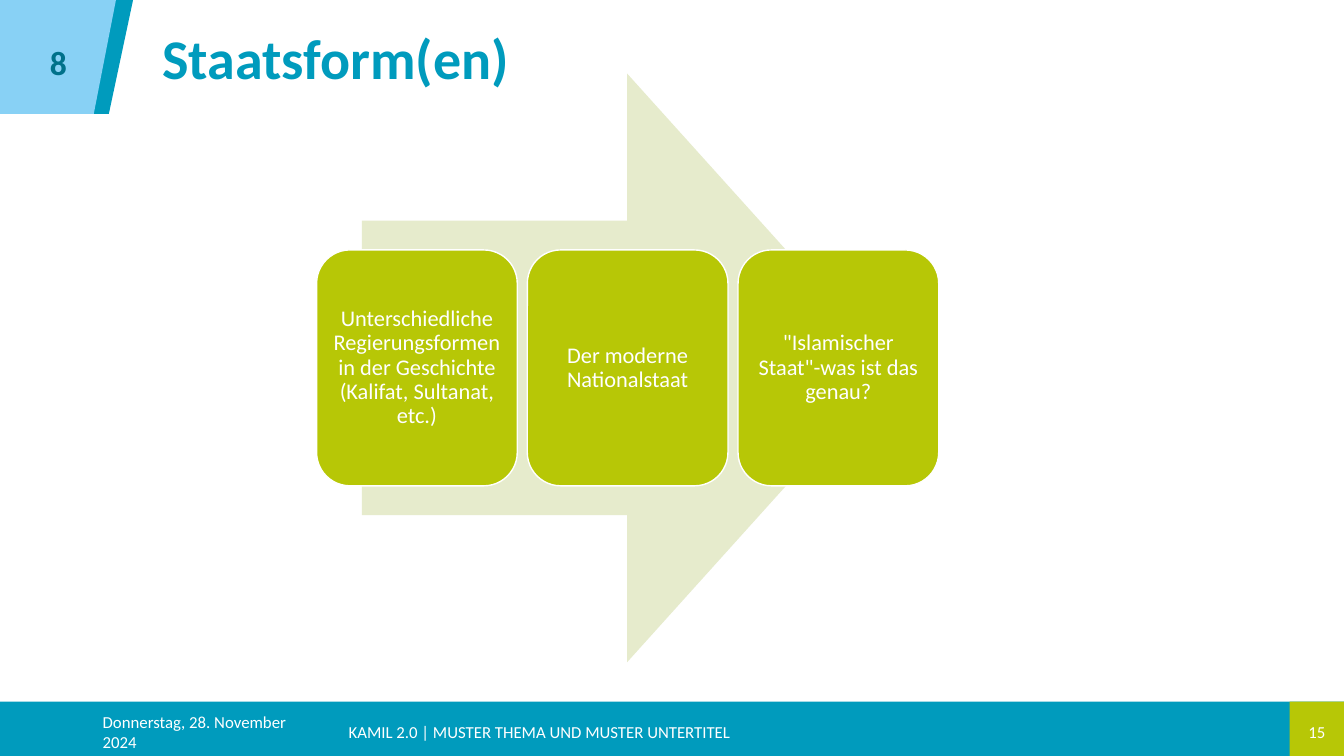
from dataclasses import dataclass

import pptx
import pptx.dml.color
import pptx.enum.shapes
import pptx.enum.text
import pptx.util

RGBColor = pptx.dml.color.RGBColor
MSO_SHAPE = pptx.enum.shapes.MSO_SHAPE
PP_ALIGN = pptx.enum.text.PP_ALIGN

EMU_PER_PX = 9144
SLIDE_WIDTH, SLIDE_HEIGHT = 1333, 750

WHITE = RGBColor(0xFF, 0xFF, 0xFF)
BLUE = RGBColor(0x00, 0x9B, 0xBD)
LIGHT_BLUE = RGBColor(0x88, 0xD1, 0xF5)
DARK_BLUE = RGBColor(0x00, 0x71, 0x8A)
GREEN = RGBColor(0xB7, 0xC7, 0x06)
PALE_GREEN = RGBColor(0xE6, 0xEB, 0xCC)


@dataclass(frozen=True)
class Box:
    left: int
    top: int
    width: int
    height: int

    def emu(self) -> list[int]:
        return [px(n) for n in (self.left, self.top, self.width, self.height)]


@dataclass(frozen=True)
class TextStyle:
    size: int
    color: RGBColor = WHITE
    bold: bool = False
    align: PP_ALIGN = PP_ALIGN.LEFT
    line_spacing: float = 1.0


@dataclass(frozen=True)
class Label:
    text: str
    box: Box
    style: TextStyle


@dataclass(frozen=True)
class Panel:
    kind: MSO_SHAPE
    box: Box
    fill: RGBColor


@dataclass(frozen=True)
class Flag:
    points: list[tuple[int, int]]
    fill: RGBColor


FOOTER = TextStyle(12)
PAGE = TextStyle(12, align=PP_ALIGN.CENTER)
TITLE = TextStyle(40, BLUE, bold=True, line_spacing=0.9)
CHAPTER = TextStyle(24, DARK_BLUE, bold=True, align=PP_ALIGN.CENTER)
STEP = TextStyle(16, align=PP_ALIGN.CENTER, line_spacing=0.9)

FOOTER_BARS = [
    Panel(MSO_SHAPE.RECTANGLE, Box(0, 696, SLIDE_WIDTH, 54), BLUE),
    Panel(MSO_SHAPE.RECTANGLE, Box(1279, 696, 54, 54), GREEN),
]
CORNER_FLAGS = [
    Flag([(11, 0), (132, 0), (108, 113), (11, 113)], BLUE),
    Flag([(0, 0), (115, 0), (93, 113), (0, 113)], LIGHT_BLUE),
]
LABELS = [
    Label("Donnerstag, 28. November 2024", Box(92, 706, 236, 40), FOOTER),
    Label("KAMIL 2.0 | MUSTER THEMA UND MUSTER UNTERTITEL", Box(336, 706, 906, 40), FOOTER),
    Label("15", Box(1279, 706, 54, 40), PAGE),
    Label("Staatsform(en)", Box(151, 23, 701, 76), TITLE),
]
ARROW = Panel(MSO_SHAPE.RIGHT_ARROW, Box(359, 73, 526, 584), PALE_GREEN)
STEPS = [
    "Unterschiedliche Regierungsformen in der Geschichte (Kalifat, Sultanat, etc.)",
    "Der moderne Nationalstaat",
    "\"Islamischer Staat\"-was ist das genau?",
]
FIRST_STEP = Box(314, 248, 199, 234)
STEP_PITCH = 209
STEP_INSET = 7
CHAPTER_PANEL = Panel(MSO_SHAPE.RECTANGLE, Box(25, 34, 66, 55), LIGHT_BLUE)


def px(length: int) -> int:
    return pptx.util.Emu(length * EMU_PER_PX)


def write(shape, text: str, style: TextStyle) -> None:
    frame = shape.text_frame
    frame.word_wrap = True
    frame.vertical_anchor = pptx.enum.text.MSO_ANCHOR.MIDDLE
    paragraph = frame.paragraphs[0]
    paragraph.text = text
    paragraph.alignment = style.align
    paragraph.line_spacing = style.line_spacing
    paragraph.font.name = "Calibri"
    paragraph.font.size = pptx.util.Pt(style.size)
    paragraph.font.bold = style.bold
    paragraph.font.color.rgb = style.color


def paint(shape, fill: RGBColor) -> None:
    shape.shadow.inherit = False
    shape.fill.solid()
    shape.fill.fore_color.rgb = fill
    shape.line.fill.background()


def draw_panel(slide, panel: Panel):
    shape = slide.shapes.add_shape(panel.kind, *panel.box.emu())
    paint(shape, panel.fill)
    return shape


def draw_flag(slide, flag: Flag) -> None:
    start, *rest = flag.points
    builder = slide.shapes.build_freeform(*start, scale=EMU_PER_PX)
    builder.add_line_segments(rest, close=True)
    paint(builder.convert_to_shape(), flag.fill)


def draw_label(slide, label: Label) -> None:
    write(slide.shapes.add_textbox(*label.box.emu()), label.text, label.style)


def draw_step(slide, index: int, text: str) -> None:
    box = Box(FIRST_STEP.left + index * STEP_PITCH, FIRST_STEP.top,
              FIRST_STEP.width, FIRST_STEP.height)
    step = draw_panel(slide, Panel(MSO_SHAPE.ROUNDED_RECTANGLE, box, GREEN))
    step.line.color.rgb = WHITE
    step.line.width = pptx.util.Pt(1)
    frame = step.text_frame
    frame.margin_left = frame.margin_right = px(STEP_INSET)
    frame.margin_top = frame.margin_bottom = px(STEP_INSET)
    write(step, text, STEP)


def main() -> None:
    presentation = pptx.Presentation()
    presentation.slide_width = px(SLIDE_WIDTH)
    presentation.slide_height = px(SLIDE_HEIGHT)
    slide = presentation.slides.add_slide(presentation.slide_layouts[6])

    for bar in FOOTER_BARS:
        draw_panel(slide, bar)
    for flag in CORNER_FLAGS:
        draw_flag(slide, flag)
    for label in LABELS:
        draw_label(slide, label)
    draw_panel(slide, ARROW)
    for index, text in enumerate(STEPS):
        draw_step(slide, index, text)
    write(draw_panel(slide, CHAPTER_PANEL), "8", CHAPTER)

    presentation.save("out.pptx")


if __name__ == "__main__":
    main()
